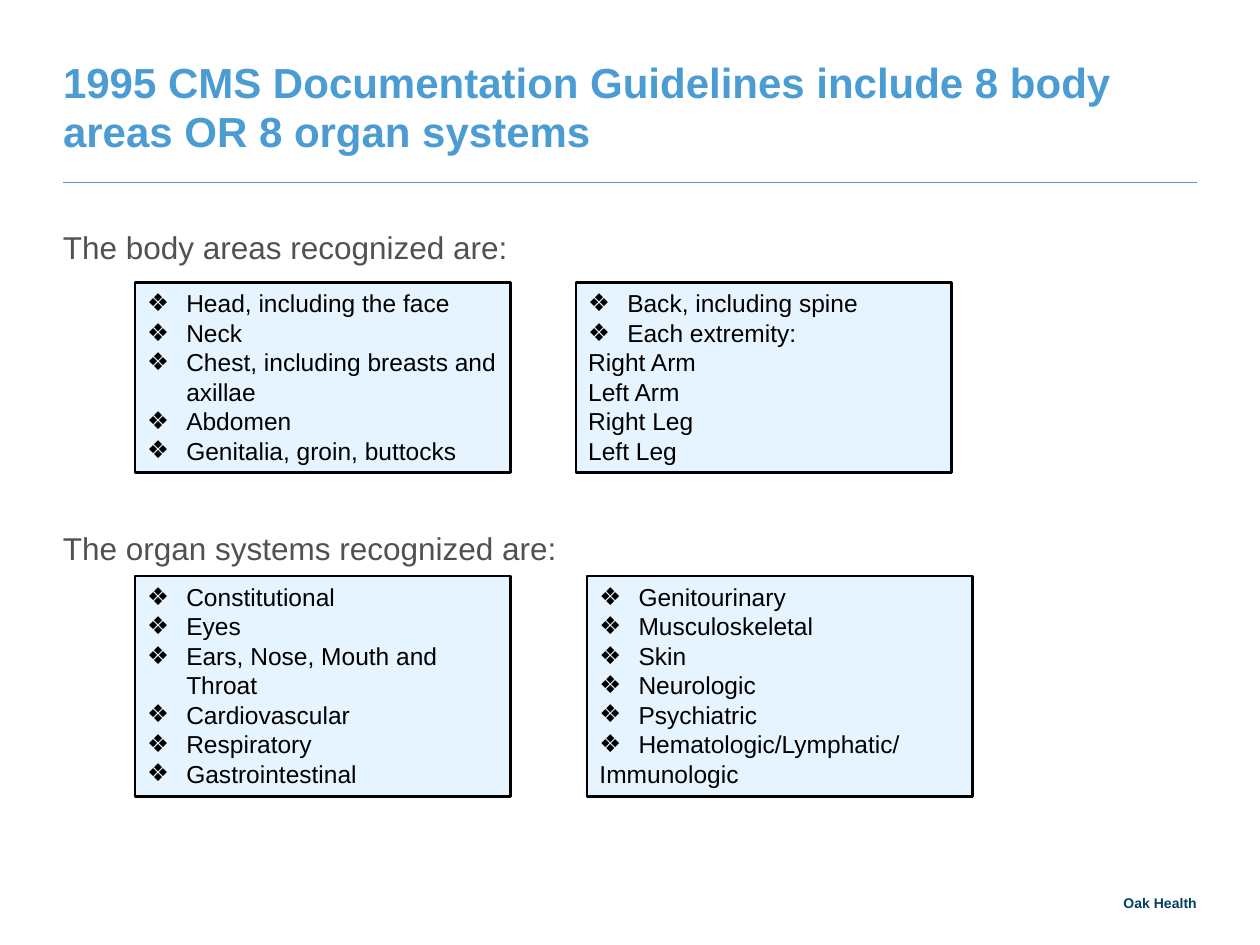
from lxml.etree import SubElement
from pptx import Presentation
from pptx.dml.color import RGBColor
from pptx.enum.shapes import MSO_CONNECTOR as CONNECTOR, MSO_SHAPE as SHAPE
from pptx.enum.text import MSO_ANCHOR as ANCHOR, MSO_AUTO_SIZE as AUTO_SIZE, PP_ALIGN as ALIGN
from pptx.oxml.ns import qn
from pptx.util import Inches, Pt

BLUE = "4B9CD3"
FONT = "Arial"
BULLET_INDENT = 0.31


def color(value):
    return RGBColor.from_string(value)


def set_frame(frame, insets, anchor=ANCHOR.TOP, auto_size=AUTO_SIZE.NONE):
    frame.word_wrap = True
    frame.auto_size = auto_size
    frame.vertical_anchor = anchor
    frame.margin_left, frame.margin_top, frame.margin_right, frame.margin_bottom = map(Inches, insets)


def write(paragraph, text, size=14, hue="000000", bold=False, align=ALIGN.LEFT,
          line_spacing=None, before=0, after=0):
    paragraph.alignment = align
    paragraph.line_spacing = line_spacing
    paragraph.space_before, paragraph.space_after = Pt(before), Pt(after)
    run = paragraph.add_run()
    run.text = text
    run.font.name, run.font.size, run.font.bold = FONT, Pt(size), bold
    run.font.color.rgb = color(hue)


def set_indent(paragraph, indent):
    properties = paragraph._p.get_or_add_pPr()
    properties.set("marL", str(Inches(indent)))
    properties.set("indent", str(-Inches(indent)))
    return properties


def add_bullet(paragraph):
    properties = set_indent(paragraph, BULLET_INDENT)
    SubElement(properties, qn("a:buFont")).set("typeface", FONT)
    SubElement(properties, qn("a:buChar")).set("char", "❖")


def add_title(slide, text):
    title = slide.shapes.title
    title.left, title.top, title.width, title.height = map(Inches, (0.5, 0.37, 10.15, 0.79))
    set_frame(title.text_frame, (0, 0.95, 1.5, 0), ANCHOR.BOTTOM)
    write(title.text_frame.paragraphs[0], text, size=24, hue=BLUE, bold=True, line_spacing=Pt(28))


def add_rule(slide):
    rule = slide.shapes.add_connector(CONNECTOR.STRAIGHT, Inches(0.5), Inches(1.45), Inches(9.5), Inches(1.45))
    rule.line.color.rgb = color(BLUE)
    rule.line.width = Pt(0.5)
    SubElement(rule._element.spPr, qn("a:effectLst"))


def add_headings(slide, body_areas, organ_systems):
    headings = slide.shapes.add_textbox(*map(Inches, (0.5, 1.73, 9, 5.11))).text_frame
    set_frame(headings, (0, 0.08, 0, 0))
    write(headings.paragraphs[0], body_areas, size=18, hue="515151", after=9)
    write(headings.add_paragraph(), organ_systems, size=18, hue="515151", before=141.5, after=9)


def add_list_box(slide, left, top, width, height, items, subitems=()):
    box = slide.shapes.add_shape(SHAPE.RECTANGLE, *map(Inches, (left, top, width, height)))
    box.shadow.inherit = False
    box.fill.solid()
    box.fill.fore_color.rgb = color("E5F4FF")
    box.line.color.rgb = color("000000")
    box.line.width = Pt(1.5)
    frame = box.text_frame
    set_frame(frame, (0.1, 0.05, 0.1, 0.05), auto_size=AUTO_SIZE.SHAPE_TO_FIT_TEXT)
    for index, item in enumerate(items):
        paragraph = frame.add_paragraph() if index else frame.paragraphs[0]
        write(paragraph, item)
        add_bullet(paragraph)
    for subitem in subitems:
        paragraph = frame.add_paragraph()
        write(paragraph, subitem)
        paragraph.level = 1
        set_indent(paragraph, 0)


def add_footer(slide, text):
    footer = slide.shapes.add_textbox(*map(Inches, (8.27, 7, 1.23, 0.23))).text_frame
    set_frame(footer, (0, 0, 0, 0), ANCHOR.BOTTOM)
    write(footer.paragraphs[0], text, size=8, hue="004163", bold=True, align=ALIGN.RIGHT)


def main():
    deck = Presentation()
    deck.slide_width, deck.slide_height = Inches(10), Inches(7.5)
    slide = deck.slides.add_slide(deck.slide_layouts[5])
    add_footer(slide, "Oak Health")
    add_rule(slide)
    add_headings(slide, "The body areas recognized are:", "The organ systems recognized are:")
    add_title(slide, "1995 CMS Documentation Guidelines include 8 body areas OR 8 organ systems")
    add_list_box(slide, 1.07, 2.24, 2.98, 1.51,
                 ["Head, including the face", "Neck", "Chest, including breasts and axillae",
                  "Abdomen", "Genitalia, groin, buttocks"])
    add_list_box(slide, 4.57, 2.24, 2.98, 1.51,
                 ["Back, including spine", "Each extremity:"],
                 ["Right Arm", "Left Arm", "Right Leg", "Left Leg"])
    add_list_box(slide, 1.07, 4.57, 2.98, 1.75,
                 ["Constitutional", "Eyes", "Ears, Nose, Mouth and Throat",
                  "Cardiovascular", "Respiratory", "Gastrointestinal"])
    add_list_box(slide, 4.66, 4.57, 3.06, 1.75,
                 ["Genitourinary", "Musculoskeletal", "Skin", "Neurologic",
                  "Psychiatric", "Hematologic/Lymphatic/"],
                 ["Immunologic"])
    deck.save("out.pptx")


if __name__ == "__main__":
    main()
